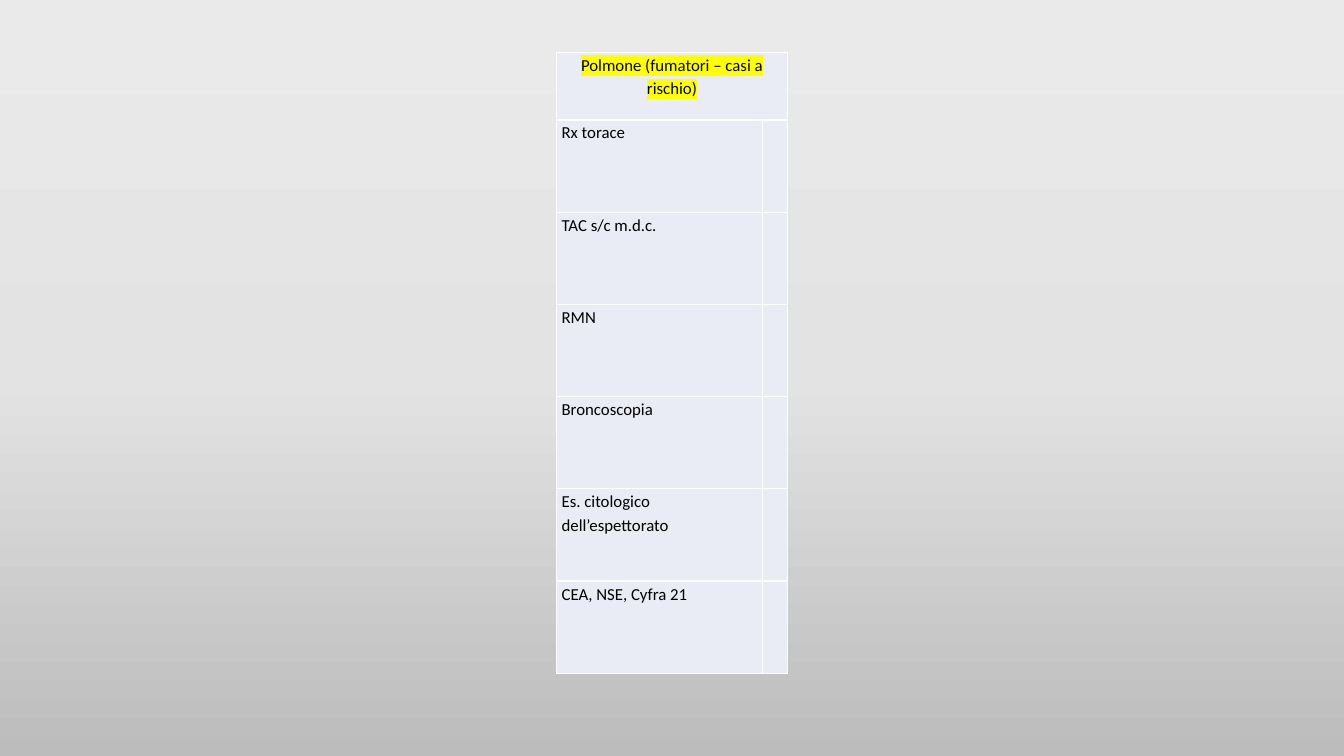
import copy

import lxml.etree
import pptx
import pptx.dml.color
import pptx.enum.text
import pptx.oxml.ns
import pptx.util

Inches, Pt = pptx.util.Inches, pptx.util.Pt
RGBColor = pptx.dml.color.RGBColor
qn = pptx.oxml.ns.qn

BLACK = RGBColor(0x00, 0x00, 0x00)
WHITE = RGBColor(0xFF, 0xFF, 0xFF)
YELLOW = RGBColor(0xFF, 0xFF, 0x00)
CELL_FILL = RGBColor(0xE9, 0xEB, 0xF5)
BACKDROP = [
    (0, RGBColor(0xEB, 0xEA, 0xEA)),
    (0.5, RGBColor(0xE4, 0xE3, 0xE3)),
    (1, RGBColor(0xBD, 0xBC, 0xBC)),
]

HEADING = "Polmone (fumatori – casi a rischio)"
EXAMS = [
    "Rx torace",
    "TAC s/c m.d.c.",
    "RMN",
    "Broncoscopia",
    "Es. citologico dell’espettorato",
    "CEA, NSE, Cyfra 21",
]
COLUMN_WIDTHS = [2.04, 0.25]
HEADING_HEIGHT, EXAM_HEIGHT = 0.67, 0.915


def paint_backdrop(page):
    """Fill the page with a gradient running from top to bottom."""
    fill = page.background.fill
    fill.gradient()
    fill.gradient_angle = 270
    stop_list = page.background._cSld.find(".//" + qn("a:gsLst"))
    stop_list.append(copy.deepcopy(stop_list[-1]))
    for stop, (position, color) in zip(fill.gradient_stops, BACKDROP):
        stop.position = position
        stop.color.rgb = color


def style_cell(cell):
    """Give a cell its margins, white borders and fill."""
    cell.margin_left = cell.margin_right = Inches(0.05)
    cell.margin_top = cell.margin_bottom = 0
    properties = cell._tc.get_or_add_tcPr()
    for side in ("a:lnL", "a:lnR", "a:lnT", "a:lnB"):
        line = lxml.etree.SubElement(properties, qn(side), w=str(Pt(1)))
        solid = lxml.etree.SubElement(line, qn("a:solidFill"))
        lxml.etree.SubElement(solid, qn("a:srgbClr"), val=str(WHITE))
    cell.fill.solid()
    cell.fill.fore_color.rgb = CELL_FILL


def write_cell(cell, text):
    cell.text_frame.text = text
    para = cell.text_frame.paragraphs[0]
    para.line_spacing = 1.15
    para.space_after = Pt(10)
    span = para.runs[0]
    span.font.size = Pt(12)
    span.font.name = "Calibri"
    span.font.color.rgb = BLACK
    return para


def highlight(span, color):
    mark = lxml.etree.Element(qn("a:highlight"))
    lxml.etree.SubElement(mark, qn("a:srgbClr"), val=str(color))
    span.font._element.find(qn("a:solidFill")).addnext(mark)


def add_exam_table(page, left, top):
    row_heights = [HEADING_HEIGHT] + [EXAM_HEIGHT] * len(EXAMS)
    frame = page.shapes.add_table(
        len(row_heights), len(COLUMN_WIDTHS), Inches(left), Inches(top),
        Inches(sum(COLUMN_WIDTHS)), Inches(sum(row_heights)))
    table = frame.table
    table.first_row = table.horz_banding = False
    for column, width in zip(table.columns, COLUMN_WIDTHS):
        column.width = Inches(width)
    for row, height in zip(table.rows, row_heights):
        row.height = Inches(height)
    for cell in table.iter_cells():
        style_cell(cell)

    heading = table.cell(0, 0)
    heading.merge(table.cell(0, 1))
    para = write_cell(heading, HEADING)
    para.alignment = pptx.enum.text.PP_ALIGN.CENTER
    highlight(para.runs[0], YELLOW)
    for index, exam in enumerate(EXAMS, start=1):
        write_cell(table.cell(index, 0), exam)


def main():
    deck = pptx.Presentation()
    deck.slide_width, deck.slide_height = Inches(13.33), Inches(7.5)
    page = deck.slides.add_slide(deck.slide_layouts[6])
    paint_backdrop(page)
    add_exam_table(page, left=5.52, top=0.52)
    deck.save("out.pptx")


if __name__ == "__main__":
    main()
